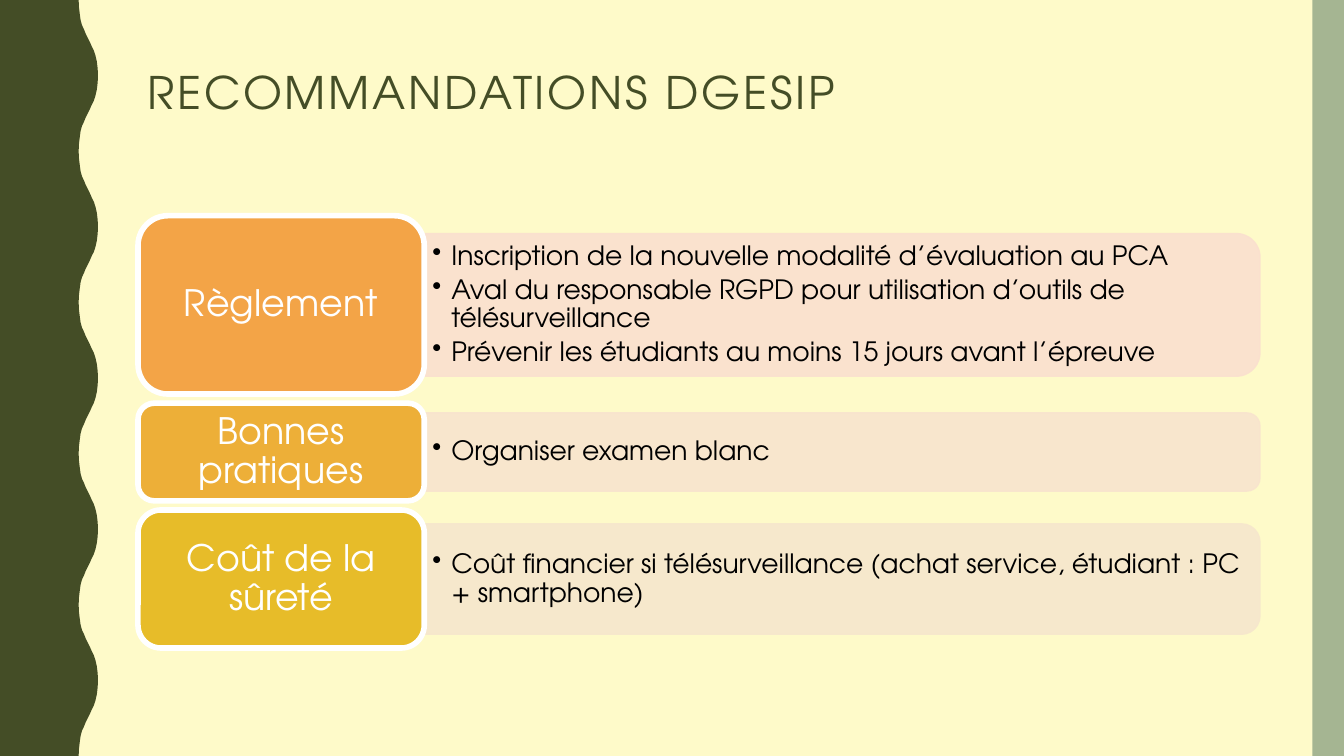
from dataclasses import dataclass

from lxml import etree
from pptx import Presentation
from pptx.dml.color import RGBColor
from pptx.enum.shapes import MSO_SHAPE
from pptx.enum.text import MSO_ANCHOR, PP_ALIGN
from pptx.oxml.ns import qn
from pptx.util import Pt

ROUND, HALF, RECT = (MSO_SHAPE.ROUNDED_RECTANGLE,
                     MSO_SHAPE.ROUND_2_SAME_RECTANGLE, MSO_SHAPE.RECTANGLE)
MIDDLE = MSO_ANCHOR.MIDDLE
LEFT, CENTER = PP_ALIGN.LEFT, PP_ALIGN.CENTER
FONT = "TeX Gyre Adventor"
WIDE, HIGH = 960, 540
COLORS = {"back": "FEFAC9", "dark": "444D26", "edge": "A5B592",
          "white": "FFFFFF", "black": "000000"}

# Layout of the list, in points
LEFT_X, TOP_Y, GAP = 98.6, 154.1, 6.5
TAG_W, BAR_W, RATIO = 204.5, 596.9, 0.8

# Right edge of the wave over half a period
PERIOD = 108
CURVE = [(56.2, 0), (56.4, 5), (57, 10), (57.6, 14.4), (58.6, 18),
         (60, 21), (61.2, 24), (62.7, 27), (64.2, 30), (65.5, 33),
         (67, 36), (68.2, 39.6), (69.2, 44), (69.8, 49), (70, 54)]


@dataclass
class Row:
    tag: str
    items: list[str]
    height: float
    fill: str
    tint: str


ROWS = [
    Row("Règlement",
        ["Inscription de la nouvelle modalité d’évaluation au PCA",
         "Aval du responsable RGPD pour utilisation d’outils de télésurveillance",
         "Prévenir les étudiants au moins 15 jours avant l’épreuve"],
        127.4, "F3A447", "FAE0CF"),
    Row("Bonnes pratiques", ["Organiser examen blanc"],
        69.8, "EDAF38", "F8E4CE"),
    Row("Coût de la sûreté",
        ["Coût financier si télésurveillance (achat service, étudiant : PC + smartphone)"],
        98.6, "E7BC29", "F6E7CD"),
]


def paint(shape, fill: str, line: str = "", width: float = 0,
          alpha: int = 100) -> None:
    shape.shadow.inherit = False
    shape.fill.solid()
    shape.fill.fore_color.rgb = RGBColor.from_string(fill)
    if line:
        shape.line.color.rgb = RGBColor.from_string(line)
        shape.line.width = Pt(width)
    else:
        shape.line.fill.background()
    if alpha < 100:
        for color in shape._element.spPr.iter(qn("a:srgbClr")):
            etree.SubElement(color, qn("a:alpha"), val=str(alpha * 1000))


def block(slide, kind, x: float, y: float, w: float, h: float):
    return slide.shapes.add_shape(kind, Pt(x), Pt(y), Pt(w), Pt(h))


def write(shape, lines: list[str], *, size: float, color: str,
          align=LEFT, pad: tuple[float, float] = (7.2, 3.6), after: float = 0,
          track: int = 0, indent: float = 0) -> None:
    frame = shape.text_frame
    frame.word_wrap = True
    frame.vertical_anchor = MIDDLE
    frame.margin_left = frame.margin_right = Pt(pad[0])
    frame.margin_top = frame.margin_bottom = Pt(pad[1])
    for i, line in enumerate(lines):
        para = frame.paragraphs[0] if i == 0 else frame.add_paragraph()
        para.alignment = align
        para.line_spacing = 0.9
        para.space_after = Pt(after)
        run = para.add_run()
        run.text = line
        run.font.name = FONT
        run.font.size = Pt(size)
        run.font.color.rgb = RGBColor.from_string(color)
        if track:
            run.font._element.set("spc", str(track * 100))
        if indent:
            props = para._p.get_or_add_pPr()
            props.set("marL", str(Pt(indent)))
            props.set("indent", str(-Pt(indent)))
            etree.SubElement(props, qn("a:buChar"), char="•")


def draw_wave(slide) -> None:
    cycle = CURVE + [(x, PERIOD - y) for x, y in CURVE[-2::-1]]
    edge = [(x, y + i * PERIOD) for i in range(HIGH // PERIOD)
            for x, y in cycle]
    points = [(Pt(x), Pt(y)) for x, y in edge + [(0, HIGH)]]
    path = slide.shapes.build_freeform(0, 0)
    path.add_line_segments(points, close=True)
    paint(path.convert_to_shape(), COLORS["dark"])


def draw_row(slide, row: Row, top: float) -> None:
    # Tinted bar, a turned shape with its round corners on the right
    thick = row.height * RATIO
    start, mid = LEFT_X + TAG_W, top + row.height / 2
    bar = block(slide, HALF, start + (BAR_W - thick) / 2, mid - BAR_W / 2,
                thick, BAR_W)
    bar.rotation = 90
    paint(bar, row.tint, row.tint, 1, 90)

    # Bullets over the bar
    box = slide.shapes.add_textbox(Pt(start), Pt(mid - thick / 2),
                                   Pt(BAR_W - 4), Pt(thick))
    write(box, row.items, size=19, color=COLORS["black"], pad=(5.8, 2.9),
          after=3.4, indent=13.5)

    # Tag on the left
    tag = block(slide, ROUND, LEFT_X, top, TAG_W, row.height)
    paint(tag, row.fill, COLORS["white"], 4)
    write(tag, [row.tag], size=26, color=COLORS["white"], align=CENTER,
          pad=(13, 3.6))


def main() -> None:
    deck = Presentation()
    deck.slide_width, deck.slide_height = Pt(WIDE), Pt(HIGH)
    slide = deck.slides.add_slide(deck.slide_layouts[6])
    back = slide.background.fill
    back.solid()
    back.fore_color.rgb = RGBColor.from_string(COLORS["back"])

    # Side decoration
    draw_wave(slide)
    paint(block(slide, RECT, 937.5, 0, 22.5, HIGH), COLORS["edge"])

    # Title
    title = slide.shapes.add_textbox(Pt(LEFT_X), Pt(30.2), Pt(801.4), Pt(75.6))
    write(title, ["RECOMMANDATIONS DGESIP"], size=32, color=COLORS["dark"],
          track=2)

    # List
    top = TOP_Y
    for row in ROWS:
        draw_row(slide, row, top)
        top += row.height + GAP

    deck.save("out.pptx")


if __name__ == "__main__":
    main()
